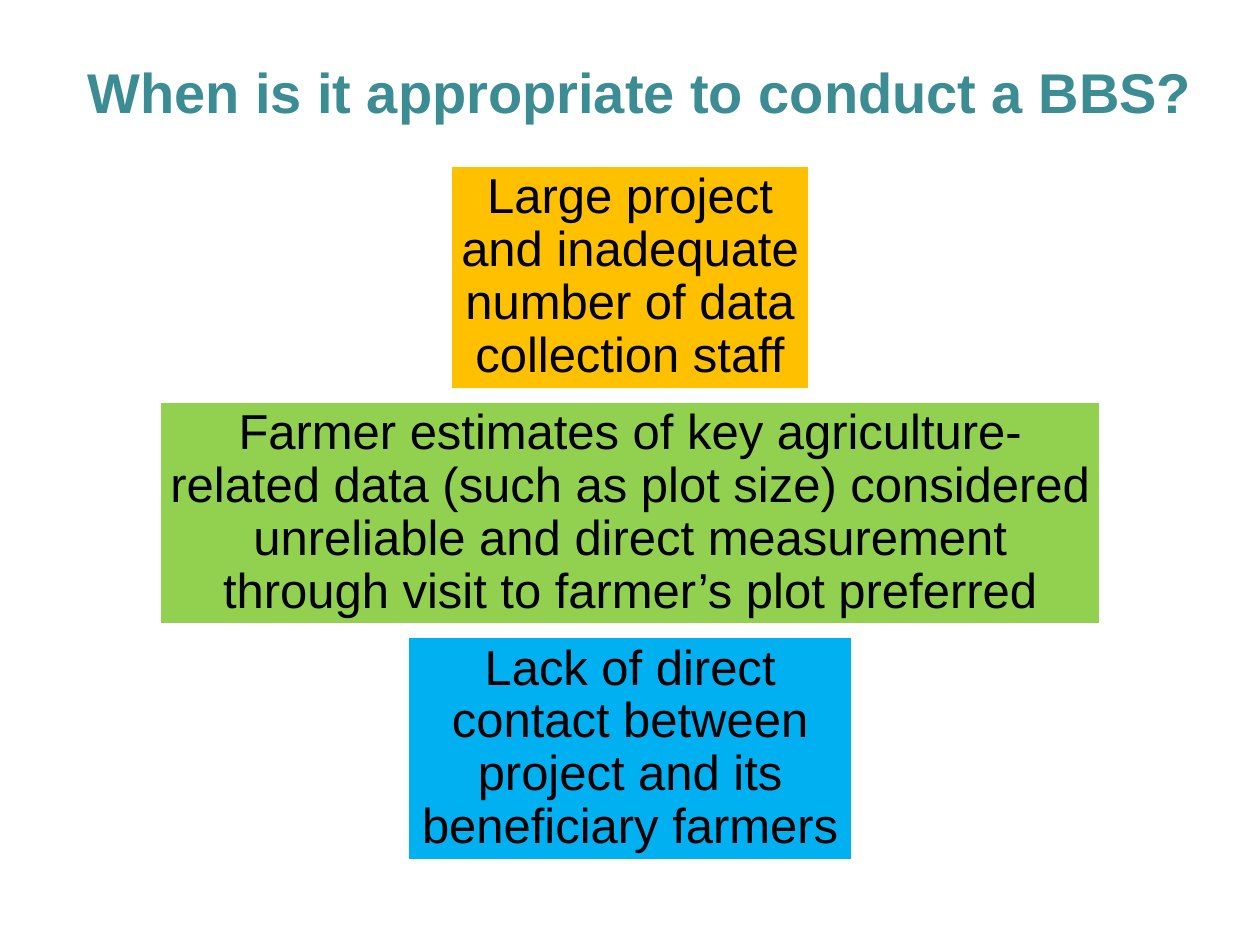
from pptx import Presentation
from pptx.dml.color import RGBColor
from pptx.enum.shapes import MSO_SHAPE
from pptx.enum.text import MSO_ANCHOR, PP_ALIGN
from pptx.util import Pt

COLOURS = {
    "title": "3C8C93",
    "text": "000000",
    "line": "FFFFFF",
    "staff": "FFC000",
    "estimates": "92D050",
    "contact": "00B0F0",
}
REASONS = [
    ("staff", 205.4, "Large project and inadequate number of data collection staff"),
    ("estimates", 538.6, "Farmer estimates of key agriculture-related data (such as plot size) "
     "considered unreliable and direct measurement through visit to farmer’s plot preferred"),
    ("contact", 254.8, "Lack of direct contact between project and its beneficiary farmers"),
]
PAGE_WIDTH, PAGE_HEIGHT = 720, 540
FIRST_TOP, BOX_HEIGHT, BOX_PITCH = 94.4, 128.2, 134.6


def colour(name):
    return RGBColor.from_string(COLOURS[name])


def set_values(target, values):
    for name, value in values.items():
        setattr(target, name, value)


def write_text(box, text, inset, font, paragraph):
    frame = box.text_frame
    margins = {f"margin_{side}": Pt(inset) for side in ("left", "top", "right", "bottom")}
    set_values(frame, {"word_wrap": True, "vertical_anchor": MSO_ANCHOR.MIDDLE, **margins})
    para = frame.paragraphs[0]
    set_values(para, {"alignment": PP_ALIGN.CENTER, **paragraph})
    span = para.add_run()
    span.text = text
    set_values(span.font, {"name": "Arial", "size": Pt(font["size"]), "bold": font["bold"]})
    span.font.color.rgb = colour(font["colour"])


def add_title(page, text):
    title = page.shapes.title
    set_values(title, {"left": Pt(41.8), "top": Pt(18), "width": Pt(648), "height": Pt(68.4)})
    write_text(title, text, 2.9, {"size": 32, "bold": True, "colour": "title"}, {})


def add_reason(page, row, fill, width, text):
    box = page.shapes.add_shape(
        MSO_SHAPE.RECTANGLE,
        Pt((PAGE_WIDTH - width) / 2), Pt(FIRST_TOP + row * BOX_PITCH),
        Pt(width), Pt(BOX_HEIGHT),
    )
    box.shadow.inherit = False
    box.fill.solid()
    box.fill.fore_color.rgb = colour(fill)
    box.line.color.rgb = colour("line")
    box.line.width = Pt(2)
    write_text(box, text, 5.6, {"size": 28, "bold": False, "colour": "text"},
               {"line_spacing": 0.9, "space_after": Pt(9.8)})


def main():
    deck = Presentation()
    set_values(deck, {"slide_width": Pt(PAGE_WIDTH), "slide_height": Pt(PAGE_HEIGHT)})
    page = deck.slides.add_slide(deck.slide_layouts[5])
    add_title(page, "When is it appropriate to conduct a BBS?")
    for row, (fill, width, text) in enumerate(REASONS):
        add_reason(page, row, fill, width, text)
    deck.save("out.pptx")


if __name__ == "__main__":
    main()
